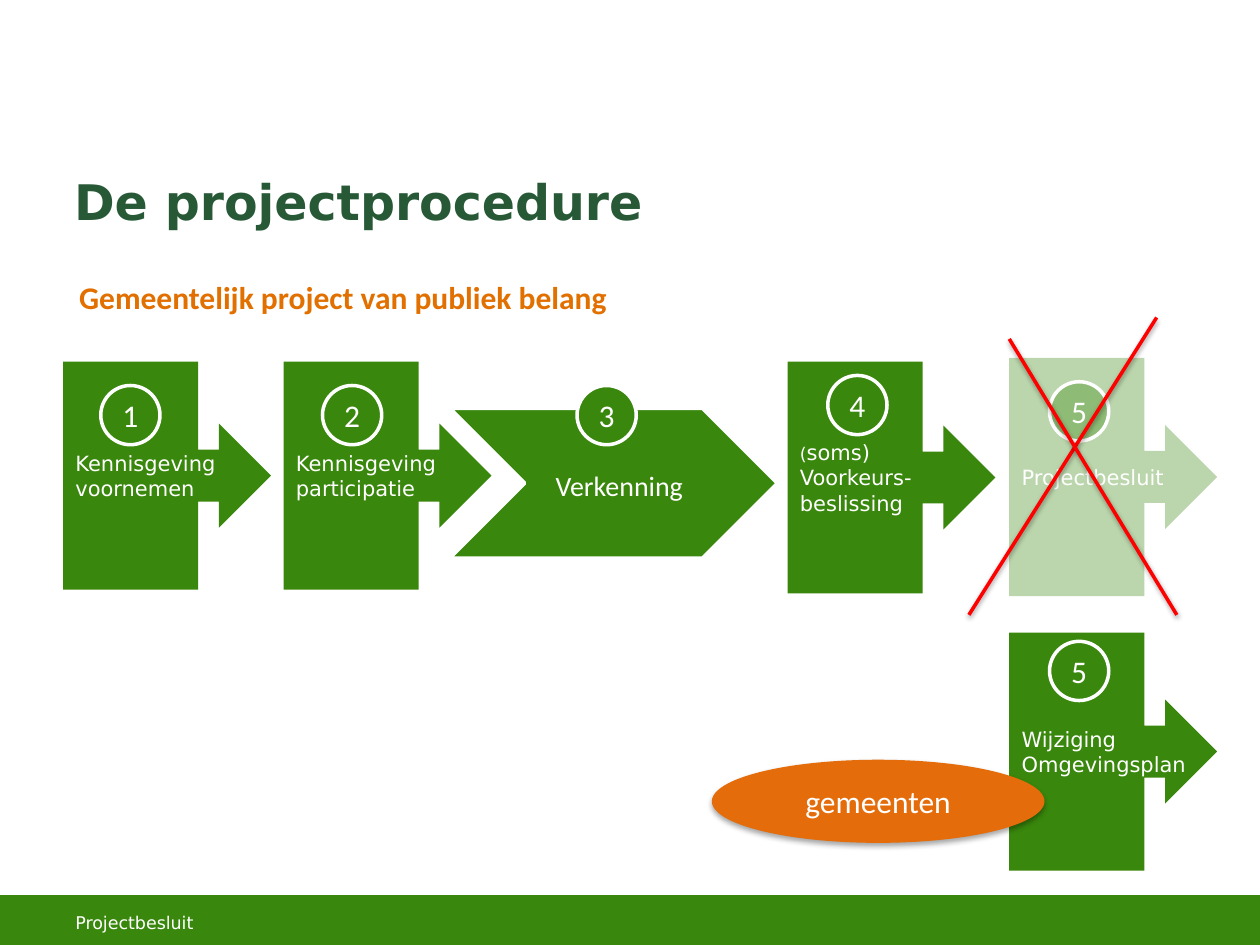
from dataclasses import dataclass
from pptx import Presentation
from pptx.dml.color import RGBColor as Rgb
from pptx.enum.shapes import MSO_CONNECTOR as Conn, MSO_SHAPE as Kind
from pptx.enum.text import MSO_ANCHOR as Anchor, PP_ALIGN as Align
from pptx.oxml.ns import qn
from pptx.util import Inches, Pt
from lxml.etree import SubElement


@dataclass(frozen=True)
class Theme:
    green: str = "39870C"
    dark: str = "275937"
    orange: str = "E46C0A"
    amber: str = "E17000"
    red: str = "FF0000"
    white: str = "FFFFFF"
    black: str = "000000"
    sans: str = "DejaVu Sans"
    body: str = "Calibri"
    title: int = 28
    head: int = 18
    step: int = 16
    label: int = 12
    small: int = 10
    line: int = 2
    faded: int = 34


T = Theme()


def write(shape, lines, size, font, color=T.white, bold=False,
          align=Align.LEFT, anchor=Anchor.MIDDLE, wrap=True):
    frame = shape.text_frame
    frame.word_wrap = wrap
    frame.vertical_anchor = anchor
    for i, line in enumerate(lines):
        para = frame.paragraphs[0] if i == 0 else frame.add_paragraph()
        para.alignment = align
        for text, points in ([(line, size)] if isinstance(line, str) else line):
            run = para.add_run()
            run.text = text
            run.font.size = Pt(points)
            run.font.name = font
            run.font.bold = bold
            run.font.color.rgb = Rgb.from_string(color)
    return frame


def inset(frame, left, top, right, low):
    frame.margin_left, frame.margin_top = Inches(left), Inches(top)
    frame.margin_right, frame.margin_bottom = Inches(right), Inches(low)


def shade(props, alpha, dist):
    effects = SubElement(props, qn("a:effectLst"))
    if alpha:
        outer = SubElement(effects, qn("a:outerShdw"), blurRad=str(Pt(3.1)),
                           dist=str(Pt(dist)), dir="5400000", rotWithShape="0")
        color = SubElement(outer, qn("a:srgbClr"), val=T.black)
        SubElement(color, qn("a:alpha"), val=str(alpha * 1000))


def add_box(slide, kind, box, fill=T.green, line=None, alpha=100, glow=False):
    shape = slide.shapes.add_shape(kind, *map(Inches, box))
    shape.fill.solid()
    shape.fill.fore_color.rgb = Rgb.from_string(fill)
    if alpha < 100:
        tint = shape._element.spPr.find(".//" + qn("a:srgbClr"))
        SubElement(tint, qn("a:alpha"), val=str(alpha * 1000))
    if line:
        shape.line.color.rgb = Rgb.from_string(line)
        shape.line.width = Pt(T.line)
    else:
        shape.line.fill.background()
    if glow:
        shade(shape._element.spPr, 35, 1.8)
    else:
        shape.shadow.inherit = False
    return shape


def add_text(slide, box, text, size, font, color, **style):
    shape = slide.shapes.add_textbox(*map(Inches, box))
    return write(shape, [text], size, font, color, **style)


def add_call(slide, left, top, height, lines, alpha=100):
    shape = add_box(slide, Kind.RIGHT_ARROW_CALLOUT, (left, top, 1.65, height),
                    alpha=alpha)
    write(shape, lines, T.label, T.sans, wrap=False)


def add_badge(slide, left, top, text, alpha=100):
    shape = add_box(slide, Kind.OVAL, (left, top, 0.47, 0.47), line=T.white,
                    alpha=alpha)
    frame = write(shape, [text], T.head, T.body, align=Align.CENTER)
    inset(frame, 0, 0, 0, 0)


def add_step(slide):
    add_box(slide, Kind.CHEVRON, (3.57, 3.24, 2.6, 1.19), line=T.white)
    shape = add_box(slide, Kind.RECTANGLE, (4.25, 3.33, 1.28, 1.07))
    frame = write(shape, ["Verkenning"], T.step, T.body, align=Align.CENTER)
    frame.paragraphs[0].line_spacing = 0.9
    inset(frame, 0.08, 0.03, 0.03, 0.03)


def add_stroke(slide, *ends):
    line = slide.shapes.add_connector(Conn.STRAIGHT, *map(Inches, ends))
    line.line.color.rgb = Rgb.from_string(T.red)
    line.line.width = Pt(T.line)
    shade(line._element.spPr, 38, 1.6)


def main():
    deck = Presentation()
    deck.slide_width, deck.slide_height = Inches(10), Inches(7.5)
    slide = deck.slides.add_slide(deck.slide_layouts[6])

    add_box(slide, Kind.RECTANGLE, (0, 7.12, 10, 0.38), line=T.green)
    title = add_text(slide, (0.49, 1.28, 9, 0.73), "De projectprocedure",
                     T.title, T.sans, T.dark, bold=True, anchor=Anchor.TOP)
    title.margin_top = Inches(0.08)

    soms = [("(", T.small), ("soms)", T.label)]
    for left, top, height, lines, alpha in (
        (0.5, 2.87, 1.81, ["Kennisgeving", "voornemen"], 100),
        (2.25, 2.87, 1.81, ["Kennisgeving", "participatie"], 100),
        (6.25, 2.87, 1.84, [soms, "Voorkeurs-", "beslissing"], 100),
        (8.01, 2.84, 1.89, ["Projectbesluit"], T.faded),
        (8.01, 5.02, 1.89, ["Wijziging", "Omgevingsplan"], 100),
    ):
        add_call(slide, left, top, height, lines, alpha)

    add_step(slide)
    for left, top, text, alpha in (
        (0.8, 3.06, "1", 100),
        (2.56, 3.06, "2", 100),
        (4.58, 3.06, "3", 100),
        (6.57, 2.98, "4", 100),
        (8.33, 3.03, "5", T.faded),
        (8.33, 5.09, "5", 100),
    ):
        add_badge(slide, left, top, text, alpha)

    towns = add_box(slide, Kind.OVAL, (5.65, 6.03, 2.64, 0.66), T.orange,
                    glow=True)
    write(towns, ["gemeenten"], T.head, T.body, align=Align.CENTER)
    add_stroke(slide, 7.69, 4.88, 9.18, 2.52)
    add_stroke(slide, 9.34, 4.88, 8.01, 2.69)

    add_text(slide, (0.53, 2.16, 4.93, 0.4),
             "Gemeentelijk project van publiek belang",
             T.head, T.body, T.amber, bold=True, anchor=Anchor.TOP)
    add_text(slide, (0.5, 7.12, 3.17, 0.4), "Projectbesluit",
             T.small, T.sans, T.white)
    deck.save("out.pptx")


if __name__ == "__main__":
    main()
